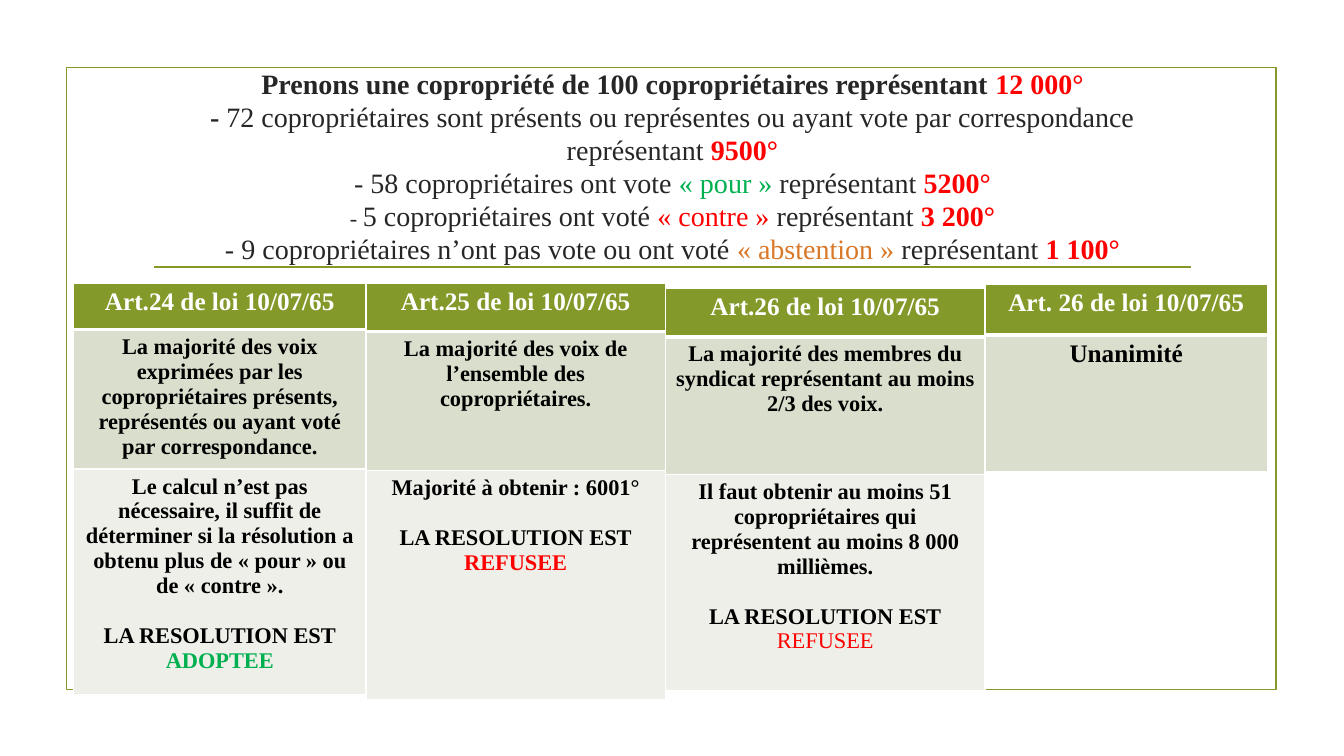
"""Build a slide that compares the majority rules for a co-ownership vote."""
from lxml.etree import SubElement
from pptx import Presentation
from pptx.dml.color import RGBColor
from pptx.enum.shapes import MSO_CONNECTOR, MSO_SHAPE
from pptx.enum.text import MSO_ANCHOR, PP_ALIGN
from pptx.oxml.ns import qn
from pptx.util import Inches, Pt

HUES = {
    "olive": "83992A", "sage": "D9DECD", "pale": "EDEFE8", "white": "FFFFFF",
    "black": "000000", "dark": "262626", "red": "FF0000", "green": "00B050",
    "orange": "D97828",
}


def color(name):
    return RGBColor.from_string(HUES[name])


def write(para, text, hue, size, bold):
    para.alignment = PP_ALIGN.CENTER
    run = para.add_run()
    run.text = text
    run.font.color.rgb = color(hue)
    look = {"name": "Times New Roman", "size": Pt(size), "bold": bold}
    for key, value in look.items():
        setattr(run.font, key, value)


deck = Presentation()
deck.slide_width, deck.slide_height = Inches(13.33), Inches(7.5)
slide = deck.slides.add_slide(deck.slide_layouts[6])
shapes = slide.shapes

frame = shapes.add_shape(
    MSO_SHAPE.RECTANGLE, Inches(0.66), Inches(0.67), Inches(12), Inches(6.17))
frame.shadow.inherit = False
frame.fill.background()
rule = shapes.add_connector(
    MSO_CONNECTOR.STRAIGHT, Inches(1.53), Inches(2.65), Inches(11.81), Inches(2.65))
for item in (frame, rule):
    item.line.color.rgb = color("olive")
    item.line.width = Pt(1.25)
SubElement(rule._element.spPr, qn("a:effectLst"))

facts = [
    [("Prenons une copropriété de 100 copropriétaires représentant ", "dark", 20, True),
     ("12 000°", "red", 20, True)],
    [("- ", "dark", 20, True),
     ("72 copropriétaires sont présents ou représentes ou ayant vote par "
      "correspondance représentant ", "dark", 20, False),
     ("9500°", "red", 20, True)],
    [("- 58 copropriétaires ont vote ", "dark", 20, False),
     ("« pour » ", "green", 20, False),
     ("représentant ", "dark", 20, False),
     ("5200°", "red", 20, True)],
    [("- ", "dark", 16, False),
     ("5 copropriétaires ont voté ", "dark", 20, False),
     ("« contre » ", "red", 20, False),
     ("représentant ", "dark", 20, False),
     ("3 200°", "red", 20, True)],
    [("- 9 copropriétaires n’ont pas vote ou ont voté ", "dark", 20, False),
     ("« abstention » ", "orange", 20, False),
     ("représentant ", "dark", 20, False),
     ("1 100°", "red", 20, True)],
]
title = shapes.add_textbox(Inches(1.42), Inches(0.94), Inches(10.5), Inches(1.43))
body = title.text_frame
for key, value in {"word_wrap": True, "vertical_anchor": MSO_ANCHOR.MIDDLE}.items():
    setattr(body, key, value)
for row, fact in enumerate(facts):
    para = body.paragraphs[0] if row == 0 else body.add_paragraph()
    para.line_spacing = 0.98
    for part in fact:
        write(para, *part)

verdict = ("LA RESOLUTION EST", "black", 16, True)
tables = [
    (0.73, 2.81, 2.9, [0.46, 1.34, 2.24], [
        [("Art.24 de loi 10/07/65", "white", 18, True)],
        [("La majorité des voix exprimées par les copropriétaires présents, "
          "représentés ou ayant voté par correspondance.", "black", 16, True)],
        [("Le calcul n’est pas nécessaire, il suffit de déterminer si la résolution "
          "a obtenu plus de « pour » ou de « contre ».", "black", 16, True),
         verdict, ("ADOPTEE", "green", 16, True)]]),
    (3.63, 2.81, 2.97, [0.48, 1.38, 2.27], [
        [("Art.25 de loi 10/07/65", "white", 18, True)],
        [("La majorité des voix de l’ensemble des copropriétaires.",
          "black", 16, True)],
        [("Majorité à obtenir : 6001°", "black", 16, True),
         verdict, ("REFUSEE", "red", 16, True)]]),
    (6.6, 2.86, 3.17, [0.48, 1.37, 2.14], [
        [("Art.26 de loi 10/07/65", "white", 18, True)],
        [("La majorité des membres du syndicat représentant au moins 2/3 des voix.",
          "black", 16, True)],
        [("Il faut obtenir au moins 51 copropriétaires qui représentent au moins "
          "8 000 millièmes.", "black", 16, True),
         verdict, ("REFUSEE", "red", 16, False)]]),
    (9.77, 2.82, 2.8, [0.5, 1.36], [
        [("Art. 26 de loi 10/07/65", "white", 18, True)],
        [("Unanimité", "black", 18, True)]]),
]
for left, top, width, highs, texts in tables:
    grid = shapes.add_table(
        len(highs), 1, Inches(left), Inches(top), Inches(width),
        Inches(sum(highs))).table
    for row, (high, lines) in enumerate(zip(highs, texts)):
        grid.rows[row].height = Inches(high)
        cell = grid.cell(row, 0)
        cell.margin_bottom = Inches(0)
        props = cell._tc.get_or_add_tcPr()
        for side in ("lnL", "lnR", "lnT", "lnB"):
            thick = (row, side) in ((0, "lnB"), (1, "lnT"))
            edge = SubElement(props, qn("a:" + side), w=str(Pt(3 if thick else 1)))
            paint = SubElement(edge, qn("a:solidFill"))
            SubElement(paint, qn("a:srgbClr"), val=HUES["white"])
        cell.fill.solid()
        cell.fill.fore_color.rgb = color(("olive", "sage", "pale")[row])
        for spot, line in enumerate(lines):
            text = cell.text_frame
            para = text.paragraphs[0] if spot == 0 else text.add_paragraph()
            if line == verdict:
                para.space_before = Pt(17.7)
            write(para, *line)

deck.save("out.pptx")
